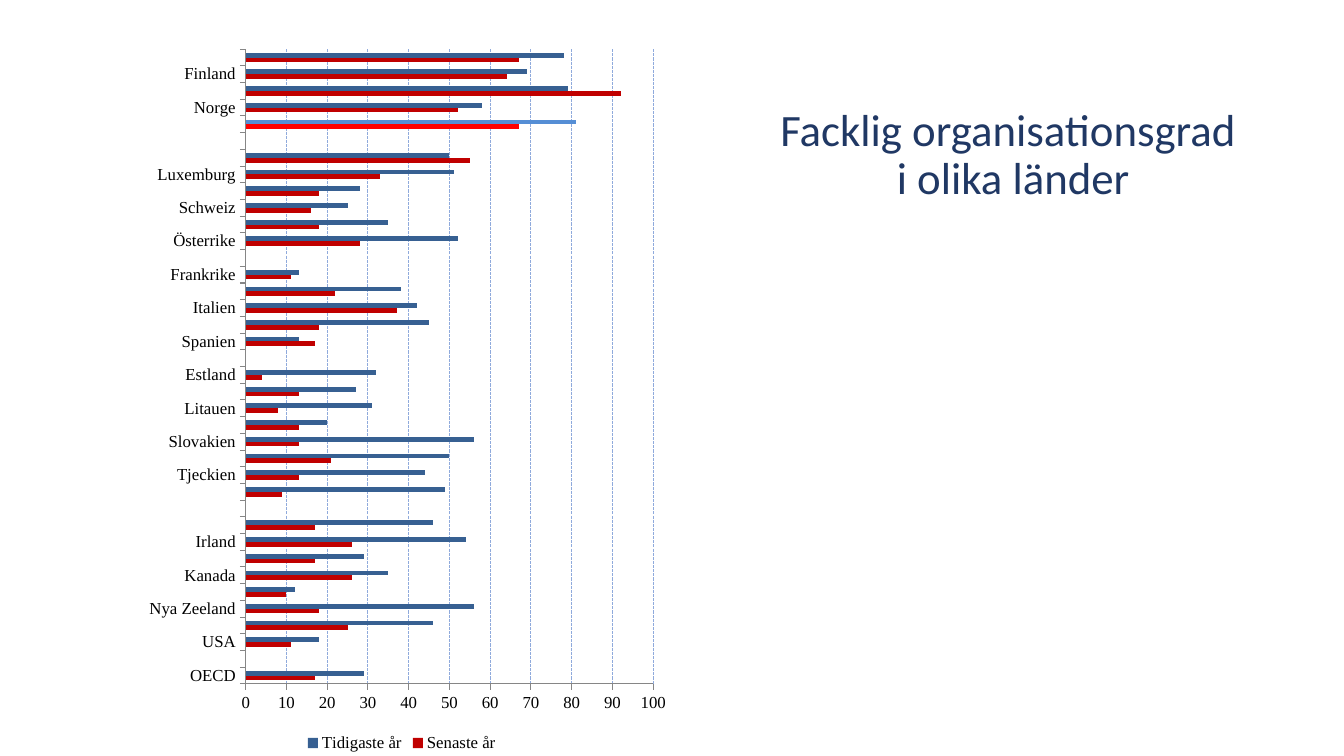
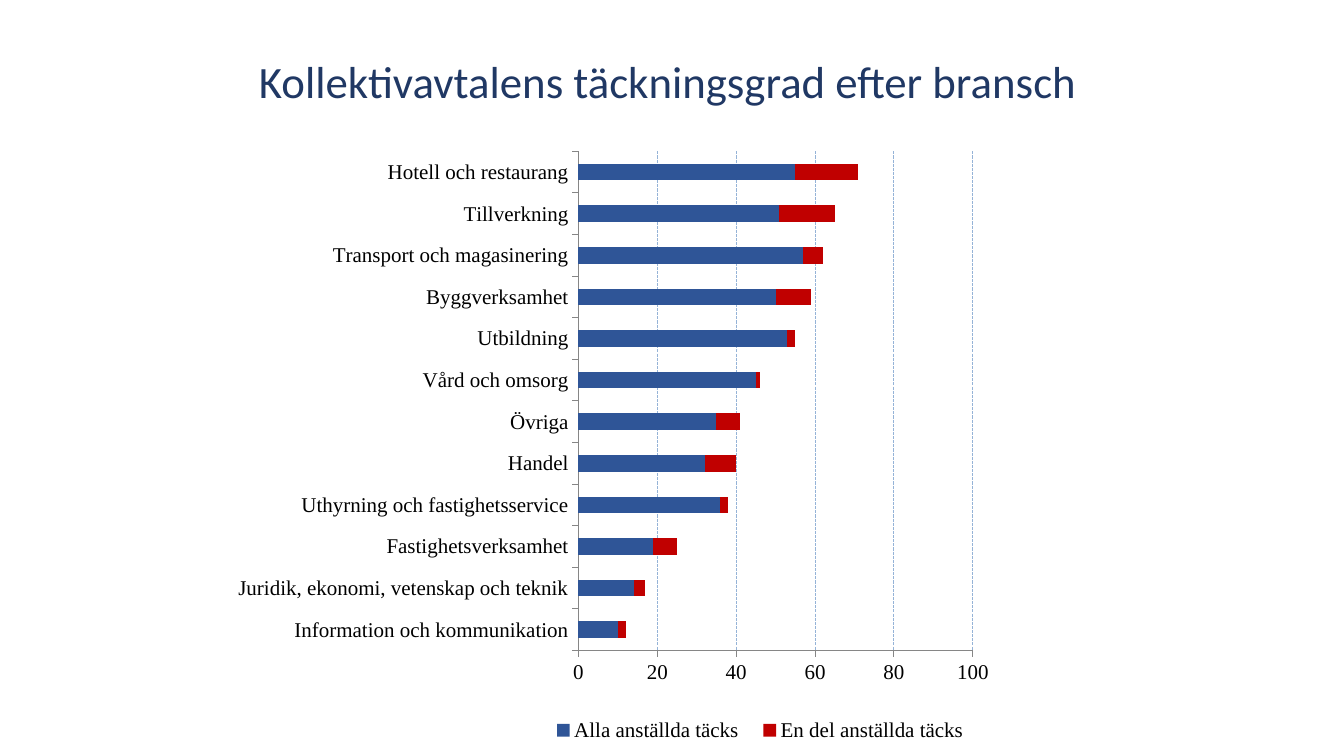
import pptx
import pptx.chart.data
import pptx.dml.color
import pptx.enum.chart
import pptx.enum.dml
import pptx.enum.text
import pptx.oxml
import pptx.oxml.ns
import pptx.util

WIDTH, HEIGHT = 13.33, 7.5
NAVY, RED, BLACK, GREY = "203864", "C00000", "000000", "868686"

UNION_ROWS = [
    ("OECD", 17, 29), ("", None, None),
    ("USA", 11, 18), ("Storbritannien", 25, 46), ("Nya Zeeland", 18, 56),
    ("Korea", 10, 12), ("Kanada", 26, 35), ("Japan", 17, 29),
    ("Irland", 26, 54), ("Australien", 17, 46), ("", None, None),
    ("Ungern", 9, 49), ("Tjeckien", 13, 44), ("Slovenien", 21, 50),
    ("Slovakien", 13, 56), ("Polen", 13, 20), ("Litauen", 8, 31),
    ("Lettland", 13, 27), ("Estland", 4, 32), ("", None, None),
    ("Spanien", 17, 13), ("Portugal", 18, 45), ("Italien", 37, 42),
    ("Grekland", 22, 38), ("Frankrike", 11, 13), ("", None, None),
    ("Österrike", 28, 52), ("Tyskland", 18, 35), ("Schweiz", 16, 25),
    ("Nederländerna", 18, 28), ("Luxemburg", 33, 51), ("Belgien", 55, 50),
    ("", None, None),
    ("Sverige", 67, 81), ("Norge", 52, 58), ("Island", 92, 79),
    ("Finland", 64, 69), ("Danmark", 67, 78),
]
COVERAGE_ROWS = [
    ("Information och kommunikation", 10, 2),
    ("Juridik, ekonomi, vetenskap och teknik", 14, 3),
    ("Fastighetsverksamhet", 19, 6),
    ("Uthyrning och fastighetsservice", 36, 2),
    ("Handel", 32, 8), ("Övriga", 35, 6), ("Vård och omsorg", 45, 1),
    ("Utbildning", 53, 2), ("Byggverksamhet", 50, 9),
    ("Transport och magasinering", 57, 5), ("Tillverkning", 51, 14),
    ("Hotell och restaurang", 55, 16),
]
SLIDES = [
    dict(
        title="Facklig organisationsgrad \vi olika länder",
        title_at=(7.61, 0.28, 4.88, 2.53),
        chart_at=(1.15, 0.36, 5.67, 7.14),
        kind="BAR_CLUSTERED", rows=UNION_ROWS, size=12, step=10, overlap=0,
        series=[("Senaste år", RED), ("Tidigaste år", "376092")],
        highlight=("Sverige", ["FF0000", "558ED5"]),
        grid="8FAADC", plot=(0.227, 0.018, 0.713, 0.882), legend=None,
    ),
    dict(
        title="Kollektivavtalens täckningsgrad efter bransch",
        title_at=(2.02, 0.3, 9.21, 1.07),
        chart_at=(1.71, 1.07, 8.27, 6.64),
        kind="BAR_STACKED", rows=COVERAGE_ROWS, size=15, step=20, overlap=100,
        series=[("Alla anställda täcks", "2F5597"), ("En del anställda täcks", RED)],
        highlight=None,
        grid="95B3D7", plot=(0.487, 0.065, 0.473, 0.746),
        legend=(0.44, 0.9, 0.53, 0.06),
    ),
]


def color(value):
    return pptx.dml.color.RGBColor.from_string(value)


def paint(format_, value):
    format_.fill.solid()
    format_.fill.fore_color.rgb = color(value)


def draw_line(line, value, dash=None):
    line.color.rgb = color(value)
    line.width = pptx.util.Pt(0.75)
    if dash:
        line.dash_style = dash


def place(shape, at):
    shape.left, shape.top, shape.width, shape.height = map(pptx.util.Inches, at)


def write(frame, text, size, font, ink):
    frame.text = text
    frame.word_wrap = True
    frame.auto_size = pptx.enum.text.MSO_AUTO_SIZE.NONE
    frame.vertical_anchor = pptx.enum.text.MSO_ANCHOR.MIDDLE
    for para in frame.paragraphs:
        para.alignment = pptx.enum.text.PP_ALIGN.CENTER
        para.line_spacing = 0.9
        for span in para.runs:
            span.font.size = pptx.util.Pt(size)
            span.font.name = font
            span.font.color.rgb = color(ink)


def set_layout(parent, index, at, inner=False):
    for old in parent.findall(pptx.oxml.ns.qn("c:layout")):
        parent.remove(old)
    target = '<c:layoutTarget val="inner"/>' if inner else ""
    modes = '<c:xMode val="edge"/><c:yMode val="edge"/>'
    shares = "".join(f'<c:{key} val="{share}"/>' for key, share in zip("xywh", at))
    parent.insert(index, pptx.oxml.parse_xml(
        f'<c:layout {pptx.oxml.ns.nsdecls("c")}><c:manualLayout>'
        f"{target}{modes}{shares}</c:manualLayout></c:layout>"))


def add_bars(page, item):
    labels, *columns = zip(*item["rows"])
    data = pptx.chart.data.CategoryChartData(number_format="General")
    data.categories = labels
    for (name, _), values in zip(item["series"], columns):
        data.add_series(name, values)
    kind = pptx.enum.chart.XL_CHART_TYPE[item["kind"]]
    at = map(pptx.util.Inches, item["chart_at"])
    chart = page.shapes.add_chart(kind, *at, data).chart
    chart.has_title = False
    chart.font.name = "Times New Roman"
    chart.font.size = pptx.util.Pt(item["size"])
    chart.font.color.rgb = color(BLACK)

    bars = chart.plots[0]
    bars.gap_width = 150
    bars.overlap = item["overlap"]
    bars.vary_by_categories = False
    for index, (series, (_, fill)) in enumerate(zip(bars.series, item["series"])):
        series.invert_if_negative = False
        paint(series.format, fill)
        if item["highlight"]:
            label, fills = item["highlight"]
            paint(series.points[labels.index(label)].format, fills[index])

    for axis in (chart.category_axis, chart.value_axis):
        axis.major_tick_mark = pptx.enum.chart.XL_TICK_MARK.OUTSIDE
        axis.minor_tick_mark = pptx.enum.chart.XL_TICK_MARK.NONE
        draw_line(axis.format.line, GREY)
    chart.category_axis.tick_label_position = pptx.enum.chart.XL_TICK_LABEL_POSITION.LOW
    scale = chart.value_axis
    scale.minimum_scale, scale.maximum_scale = 0, 100
    scale.major_unit = item["step"]
    scale.has_major_gridlines = True
    draw_line(scale.major_gridlines.format.line, item["grid"],
              pptx.enum.dml.MSO_LINE.SQUARE_DOT)

    chart.has_legend = True
    chart.legend.position = pptx.enum.chart.XL_LEGEND_POSITION.BOTTOM
    chart.legend.include_in_layout = False
    body = chart.element.find(pptx.oxml.ns.qn("c:chart"))
    set_layout(body.find(pptx.oxml.ns.qn("c:plotArea")), 0, item["plot"], inner=True)
    if item["legend"]:
        set_layout(body.find(pptx.oxml.ns.qn("c:legend")), 1, item["legend"])


def main():
    deck = pptx.Presentation()
    deck.slide_width = pptx.util.Inches(WIDTH)
    deck.slide_height = pptx.util.Inches(HEIGHT)
    for item in SLIDES:
        page = deck.slides.add_slide(deck.slide_layouts.get_by_name("Title Only"))
        place(page.shapes.title, item["title_at"])
        write(page.shapes.title.text_frame, item["title"],
              size=32, font="Calibri", ink=NAVY)
        add_bars(page, item)
    deck.save("out.pptx")


if __name__ == "__main__":
    main()
